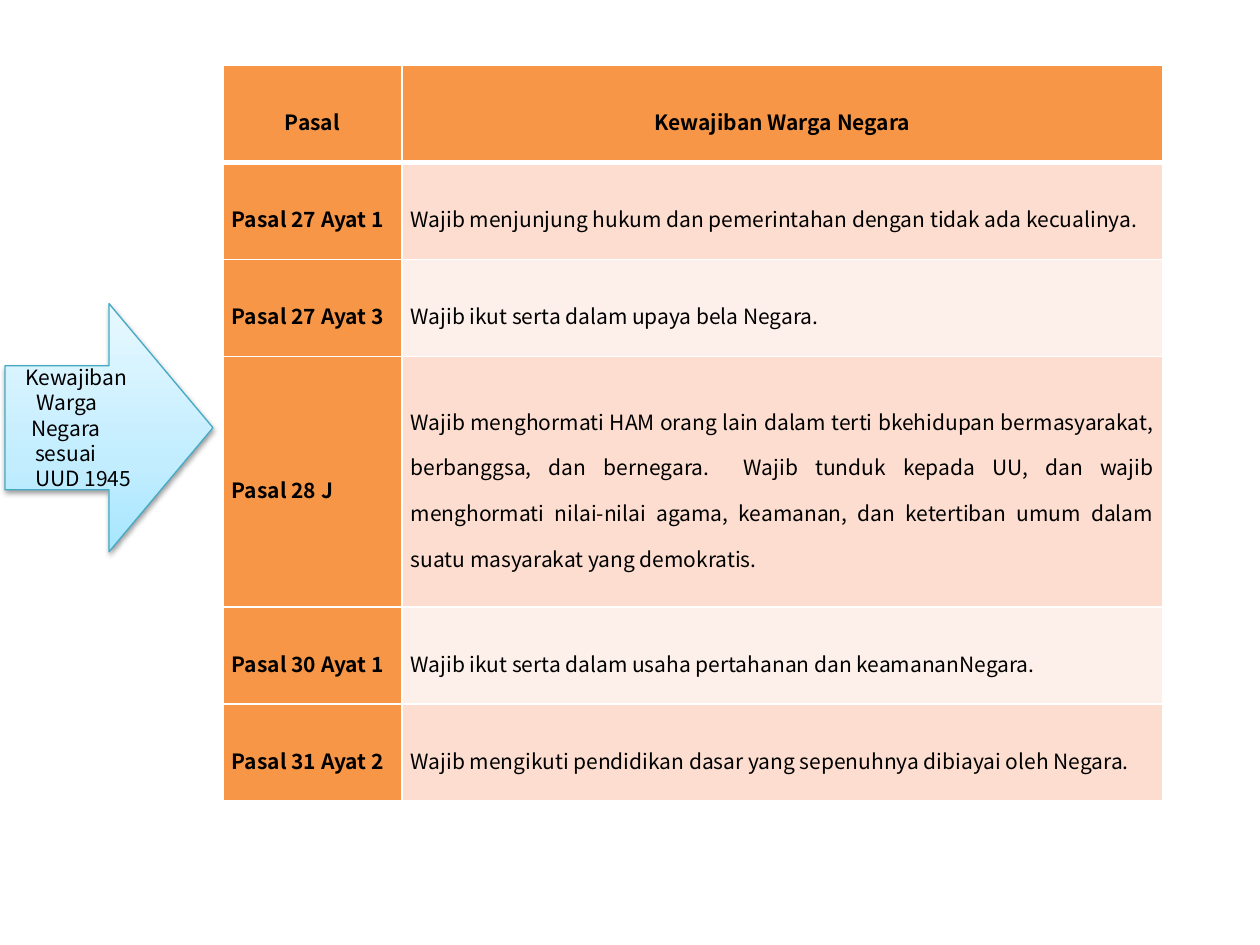
"""Build a slide with an arrow label and a table of citizen duties."""
from copy import deepcopy
from lxml import etree
from pptx import Presentation, util as u
from pptx.dml.color import RGBColor
from pptx.enum import shapes, text
from pptx.oxml import ns

ROWS = [
    ("Pasal", "Kewajiban Warga Negara"),
    ("Pasal 27 Ayat 1", "Wajib menjunjung hukum dan pemerintahan dengan tidak ada kecualinya."),
    ("Pasal 27 Ayat 3", "Wajib ikut serta dalam upaya bela Negara."),
    ("Pasal 28 J", "Wajib menghormati HAM orang lain dalam terti bkehidupan bermasyarakat, "
     "berbanggsa, dan bernegara.  Wajib tunduk kepada UU, dan wajib menghormati "
     "nilai-nilai agama, keamanan, dan ketertiban umum dalam suatu masyarakat yang demokratis."),
    ("Pasal 30 Ayat 1", "Wajib ikut serta dalam usaha pertahanan dan keamananNegara."),
    ("Pasal 31 Ayat 2", "Wajib mengikuti pendidikan dasar yang sepenuhnya dibiayai oleh Negara."),
]
LABEL = [("Kewajiban", 0.06), ("Warga", 0.15), ("Negara", 0.11),
         ("sesuai", 0.14), ("UUD 1945", 0.14)]
COLS = (1.42, 6.04)
ROW, TALL = 0.77, 1.99
BLACK = RGBColor(0, 0, 0)
ORANGE = RGBColor(0xF7, 0x96, 0x46)
BANDS = (RGBColor(0xFD, 0xEF, 0xE9), RGBColor(0xFC, 0xDD, 0xCF))
TEAL = RGBColor(0x46, 0xAA, 0xC5)
STOPS = [(0, RGBColor(0xA7, 0xE6, 0xFF)), (0.35, RGBColor(0xC1, 0xED, 0xFF)),
         (1, RGBColor(0xE7, 0xF8, 0xFF))]
FONT = {"name": "Noto Sans CJK KR", "size": u.Pt(12)}
INSET = {"margin_left": u.Inches(0.07), "margin_right": u.Inches(0.07),
         "margin_top": 0, "margin_bottom": 0,
         "vertical_anchor": text.MSO_ANCHOR.MIDDLE}


def apply(item, form):
    for key, val in form.items():
        setattr(item, key, val)


def add(host, tag, **attrs):
    return etree.SubElement(host, ns.qn(tag), attrs)


def style(para, bold=False):
    apply(para.font, {**FONT, "bold": bold})
    para.font.color.rgb = BLACK


def edge(cell, side, width):
    line = add(cell._tc.get_or_add_tcPr(), "a:ln" + side, w=str(u.Pt(width)))
    add(add(line, "a:solidFill"), "a:srgbClr", val="FFFFFF")


def fill_cell(cell, words, row, col):
    for side in "LRTB":
        thick = (row, side) in ((0, "B"), (1, "T"))
        edge(cell, side, 3 if thick else 1)
    cell.fill.solid()
    cell.fill.fore_color.rgb = BANDS[row % 2] if row and col else ORANGE
    apply(cell, INSET)
    cell.text = words
    para = cell.text_frame.paragraphs[0]
    align = text.PP_ALIGN.JUSTIFY if row else text.PP_ALIGN.CENTER
    apply(para, {"alignment": align, "line_spacing": 1.5})
    style(para, not (row and col))


def add_duties(slide):
    highs = [TALL if row == 3 else ROW for row in range(len(ROWS))]
    box = [u.Inches(n) for n in (1.77, 0.52, sum(COLS), sum(highs))]
    table = slide.shapes.add_table(len(ROWS), len(COLS), *box).table
    for col, wide in zip(table.columns, COLS):
        col.width = u.Inches(wide)
    for r, (high, pair) in enumerate(zip(highs, ROWS)):
        table.rows[r].height = u.Inches(high)
        for c, words in enumerate(pair):
            fill_cell(table.cell(r, c), words, r, c)


def add_arrow(slide):
    box = [u.Inches(n) for n in (0.04, 2.41, 1.65, 1.97)]
    arrow = slide.shapes.add_shape(shapes.MSO_SHAPE.RIGHT_ARROW, *box)
    arrow.fill.gradient()
    arrow.fill.gradient_angle = 90
    group = arrow._element.spPr.find(".//" + ns.qn("a:gsLst"))
    group.insert(1, deepcopy(group[0]))
    for stop, (place, color) in zip(arrow.fill.gradient_stops, STOPS):
        stop.position = place
        stop.color.rgb = color
    arrow.line.color.rgb = TEAL
    arrow.line.width = u.Pt(0.75)
    arrow.shadow.inherit = False
    glow = add(arrow._element.spPr.find(ns.qn("a:effectLst")), "a:outerShdw",
               blurRad=str(u.Pt(3.1)), dist=str(u.Pt(1.6)),
               dir="5400000", rotWithShape="0")
    add(add(glow, "a:srgbClr", val="000000"), "a:alpha", val="38000")
    frame = arrow.text_frame
    apply(frame, {"word_wrap": True, "vertical_anchor": text.MSO_ANCHOR.MIDDLE})
    frame.text = "\n".join(word for word, _ in LABEL)
    for para, (_, left) in zip(frame.paragraphs, LABEL):
        para.alignment = text.PP_ALIGN.LEFT
        para._p.get_or_add_pPr().set("marL", str(u.Inches(left)))
        style(para)


def main():
    deck = Presentation()
    apply(deck, {"slide_width": u.Inches(10), "slide_height": u.Inches(7.5)})
    slide = deck.slides.add_slide(deck.slide_layouts[6])
    add_duties(slide)
    add_arrow(slide)
    deck.save("out.pptx")


if __name__ == "__main__":
    main()
